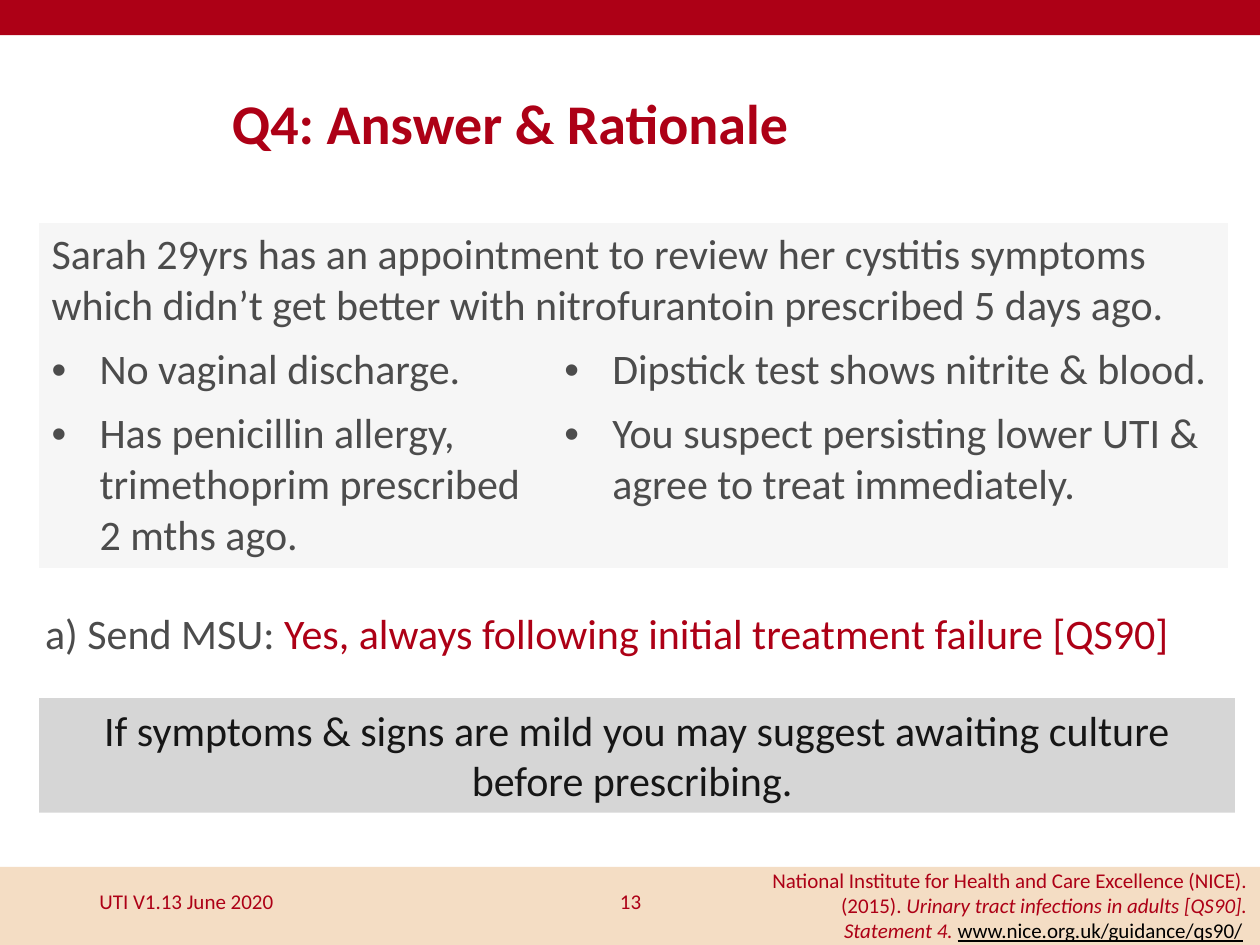
import pptx
import pptx.util
import pptx.dml.color
import pptx.enum.shapes
import pptx.enum.text
import pptx.oxml.ns
import lxml.etree

Inches = pptx.util.Inches
Pt = pptx.util.Pt
RGB = pptx.dml.color.RGBColor
ALIGN = pptx.enum.text.PP_ALIGN
ANCHOR = pptx.enum.text.MSO_ANCHOR
FIT = pptx.enum.text.MSO_AUTO_SIZE
qn = pptx.oxml.ns.qn

RED = RGB(0xAD, 0x00, 0x16)
SAND = RGB(0xF4, 0xDD, 0xC4)
PALE = RGB(0xF6, 0xF6, 0xF6)
GREY = RGB(0xD6, 0xD6, 0xD6)
DARK = RGB(0x4C, 0x4C, 0x4C)
INK = RGB(0x16, 0x16, 0x16)
BLACK = RGB(0, 0, 0)


class Deck:
    face = "Calibri"
    body = 24
    small = 12

    def __init__(self):
        self.prs = pptx.Presentation()
        self.prs.slide_width = Inches(10)
        self.prs.slide_height = Inches(7.5)
        self.slide = self.prs.slides.add_slide(self.prs.slide_layouts[5])

    def font(self, font, size, color, bold=None, italic=None, under=None):
        font.name = self.face
        font.size = Pt(size)
        font.color.rgb = color
        font.bold, font.italic, font.underline = bold, italic, under

    def plain(self, para, text, size, color, align=ALIGN.LEFT, bold=None):
        para.text = text
        para.alignment = align
        self.font(para.font, size, color, bold)

    def mix(self, para, parts, size, align=ALIGN.LEFT):
        """Add runs given as (text, colour, italic, underline)."""
        para.alignment = align
        for text, color, italic, under in parts:
            run = para.add_run()
            run.text = text
            self.font(run.font, size, color, None, italic, under)

    def title(self, text, box):
        shape = self.slide.shapes.title
        shape.left, shape.top, shape.width, shape.height = map(Inches, box)
        frame = shape.text_frame
        frame.vertical_anchor = ANCHOR.MIDDLE
        para = frame.paragraphs[0]
        para.line_spacing = 0.9
        self.plain(para, text, 32, RED, bold=True)

    def rect(self, box, fill):
        kind = pptx.enum.shapes.MSO_SHAPE.RECTANGLE
        shape = self.slide.shapes.add_shape(kind, *map(Inches, box))
        shape.shadow.inherit = False
        shape.fill.solid()
        shape.fill.fore_color.rgb = fill
        shape.line.fill.background()
        return shape

    def note(self, box, fill, text, color):
        frame = self.rect(box, fill).text_frame
        frame.word_wrap = True
        frame.vertical_anchor = ANCHOR.TOP
        frame.auto_size = FIT.SHAPE_TO_FIT_TEXT
        self.plain(frame.paragraphs[0], text, self.body, color, ALIGN.CENTER)

    def label(self, box, wrap=True, anchor=ANCHOR.MIDDLE):
        """Add a text box and return its first paragraph."""
        frame = self.slide.shapes.add_textbox(*map(Inches, box)).text_frame
        frame.word_wrap = wrap
        frame.vertical_anchor = anchor
        return frame.paragraphs[0]

    def cell(self, cell, text, bullet):
        props = cell._tc.get_or_add_tcPr()
        for side in ("a:lnL", "a:lnR", "a:lnT", "a:lnB"):
            line = lxml.etree.SubElement(props, qn(side), w="0")
            lxml.etree.SubElement(line, qn("a:noFill"))
        cell.fill.solid()
        cell.fill.fore_color.rgb = PALE
        para = cell.text_frame.paragraphs[0]
        if bullet:
            props = para._p.get_or_add_pPr()
            props.set("marL", str(Inches(0.38)))
            props.set("indent", str(-Inches(0.38)))
            lxml.etree.SubElement(props, qn("a:buFont"), typeface="Arial")
            lxml.etree.SubElement(props, qn("a:buChar"), char="•")
        self.plain(para, text, self.body, DARK)

    def table(self, box, cols, rows, intro, facts):
        """Add an intro row across all columns, then rows of bullets."""
        frame = self.slide.shapes.add_table(
            len(rows), len(cols), *map(Inches, box))
        table = frame.table
        table.first_row = table.horz_banding = False
        for col, width in zip(table.columns, cols):
            col.width = Inches(width)
        for row, height in zip(table.rows, rows):
            row.height = Inches(height)
        head = table.cell(0, 0)
        head.merge(table.cell(0, len(cols) - 1))
        self.cell(head, intro, False)
        for r, line in enumerate(facts, 1):
            for c, text in enumerate(line):
                self.cell(table.cell(r, c), text, True)


def main():
    deck = Deck()
    deck.rect((0, 6.88, 10, 0.62), SAND)
    deck.rect((0, 0, 10, 0.28), RED)
    deck.title("Q4: Answer & Rationale", (1.74, 0.65, 7.57, 0.71))

    deck.table(
        (0.31, 1.77, 9.44, 2.7), (4.07, 5.37), (0.9, 0.5, 1.3),
        "Sarah 29yrs has an appointment to review her cystitis symptoms "
        "which didn’t get better with nitrofurantoin prescribed 5 days ago.",
        [("No vaginal discharge.", "Dipstick test shows nitrite & blood."),
         ("Has penicillin allergy, trimethoprim prescribed 2 mths ago.",
          "You suspect persisting lower UTI & agree to treat immediately.")])

    deck.mix(
        deck.label((0.26, 4.77, 9.2, 0.5), False, ANCHOR.TOP),
        [("a) Send MSU: ", DARK, None, None),
         ("Yes, always following initial treatment failure [QS90]",
          RED, None, None)],
        deck.body)
    deck.note(
        (0.31, 5.54, 9.49, 0.91), GREY,
        "If symptoms & signs are mild you may suggest awaiting culture "
        "before prescribing. ", INK)

    deck.plain(deck.label((0.69, 6.95, 2.25, 0.4)),
               "UTI V1.13 June 2020", deck.small, RED)
    deck.plain(deck.label((3.88, 6.95, 2.25, 0.4)),
               "13", deck.small, RED, ALIGN.CENTER)
    deck.mix(
        deck.label((5.97, 6.83, 4.03, 0.71)),
        [("National Institute for Health and Care Excellence (NICE). "
          "(2015). ", RED, None, None),
         ("Urinary tract infections in adults [QS90]. Statement 4. ",
          RED, True, None),
         ("www.nice.org.uk/guidance/qs90/", BLACK, None, True),
         (" ", RED, None, None)],
        deck.small, ALIGN.RIGHT)
    deck.prs.save("out.pptx")


if __name__ == "__main__":
    main()
